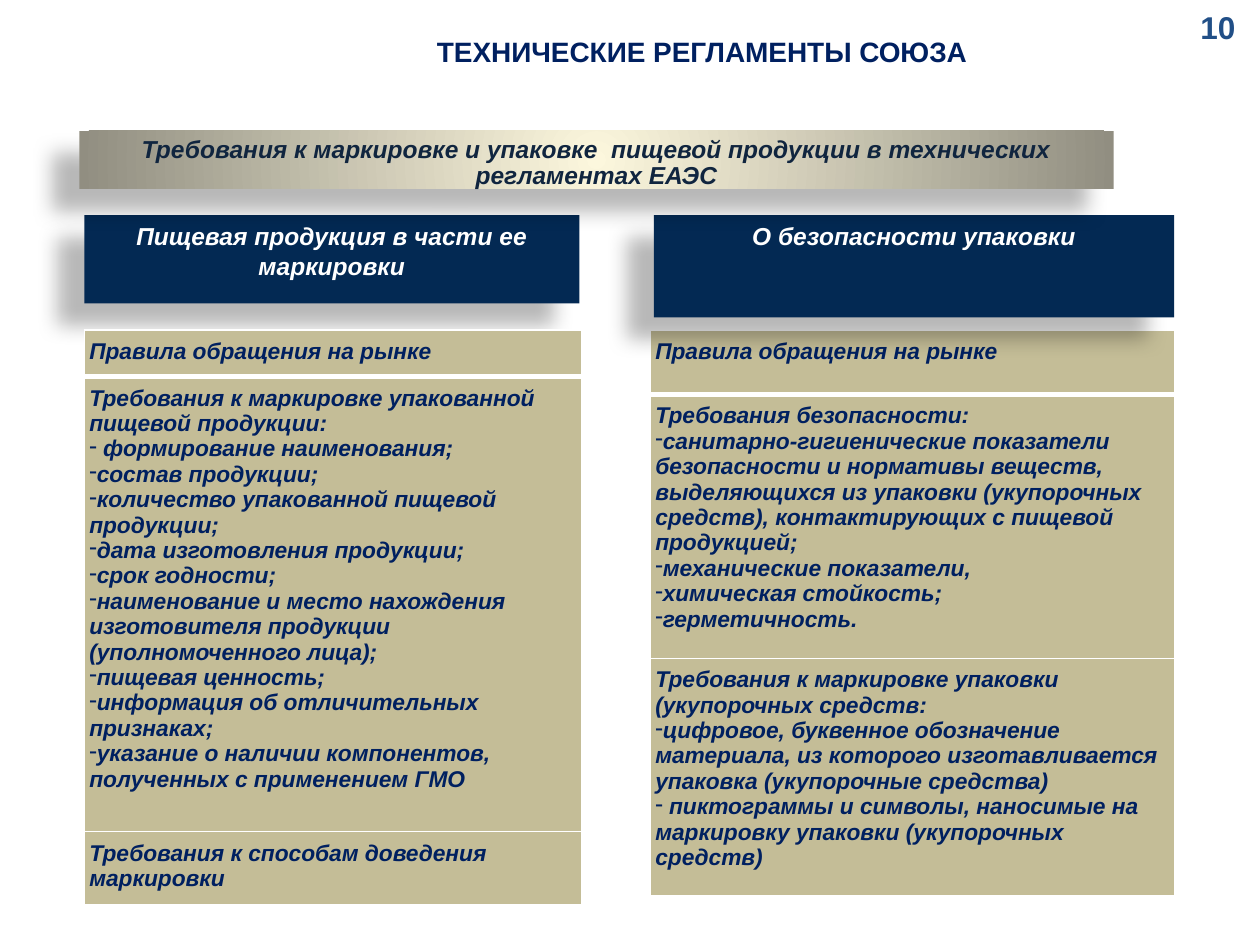
import pptx
import pptx.dml.color
import pptx.enum.shapes
import pptx.enum.text
import pptx.oxml
import pptx.oxml.ns
import pptx.util
from pptx.util import Cm

COLORS = {
    "navy": "002060",
    "number": "214F87",
    "heading": "032953",
    "cell": "C4BD97",
    "white": "FFFFFF",
    "black": "000000",
    "banner_text": "10253F",
    "banner_center": "FCF7DD",
    "banner_edge": "918E81",
}
FONT = "Arial"
CENTER = pptx.enum.text.PP_ALIGN.CENTER
MIDDLE = pptx.enum.text.MSO_ANCHOR.MIDDLE
TOP = pptx.enum.text.MSO_ANCHOR.TOP

# Each cell is a list of paragraphs; a leading "-" makes a dash bullet
MARKING_ROWS = [
    (0.94, ["Правила обращения на рынке"]),
    (9.17, [
        "Требования к маркировке упакованной пищевой продукции:",
        "- формирование наименования;",
        "-состав продукции;",
        "-количество упакованной пищевой продукции;",
        "-дата изготовления продукции;",
        "-срок годности;",
        "-наименование и место нахождения изготовителя продукции (уполномоченного лица);",
        "-пищевая ценность;",
        "-информация об отличительных признаках;",
        "-указание о наличии компонентов, полученных с применением ГМО",
    ]),
    (1.45, ["Требования к способам доведения маркировки"]),
]
PACKAGING_ROWS = [
    (1.3, ["Правила обращения на рынке"]),
    (5.3, [
        "Требования безопасности:",
        "-санитарно-гигиенические показатели безопасности и нормативы веществ, "
        "выделяющихся из упаковки (укупорочных средств), контактирующих с пищевой продукцией;",
        "-механические показатели,",
        "-химическая стойкость;",
        "-герметичность.",
    ]),
    (4.78, [
        "Требования к маркировке упаковки (укупорочных средств:",
        "-цифровое, буквенное обозначение материала, из которого изготавливается "
        "упаковка (укупорочные средства)",
        "- пиктограммы и символы, наносимые на маркировку упаковки (укупорочных средств)",
    ]),
]


def rgb(name):
    return pptx.dml.color.RGBColor.from_string(COLORS[name])


def add_xml(parent, xml):
    namespace = pptx.oxml.ns.nsdecls("a")
    parent.append(pptx.oxml.parse_xml(xml.replace(" ", f" {namespace} ", 1)))


def format_runs(para, size, color, italic=False):
    for span in para.runs:
        span.font.name = FONT
        span.font.size = pptx.util.Pt(size)
        span.font.bold = True
        span.font.italic = italic
        span.font.color.rgb = rgb(color)


def write_line(box, text, size, color, italic=False, anchor=TOP):
    frame = box.text_frame
    frame.word_wrap = True
    frame.vertical_anchor = anchor
    frame.text = text
    para = frame.paragraphs[0]
    para.alignment = CENTER
    format_runs(para, size, color, italic)
    return para


def add_title(page, text):
    title = page.shapes.title
    title.left, title.top, title.width, title.height = Cm(3.4), Cm(0.25), Cm(21.51), Cm(1.55)
    write_line(title, text, 16, "navy", anchor=MIDDLE)


def add_page_number(page, text):
    box = page.shapes.add_textbox(Cm(23.7), Cm(0.03), Cm(1.7), Cm(1.07))
    write_line(box, text, 18, "number")


def add_panel(page, left, top, width, height):
    """Rectangle with a soft shadow falling to the lower left."""
    panel = page.shapes.add_shape(
        pptx.enum.shapes.MSO_SHAPE.RECTANGLE, Cm(left), Cm(top), Cm(width), Cm(height))
    panel.line.fill.background()
    panel.shadow.inherit = False
    effects = panel.element.spPr.find(pptx.oxml.ns.qn("a:effectLst"))
    blur, distance = pptx.util.Pt(11.8), pptx.util.Pt(19.7)
    add_xml(effects, f'<a:outerShdw blurRad="{blur}" dist="{distance}" dir="{141 * 60000}" '
                     f'algn="ctr" rotWithShape="0"><a:srgbClr val="{COLORS["black"]}">'
                     '<a:alpha val="28000"/></a:srgbClr></a:outerShdw>')
    return panel


def add_heading(page, text, left, width, height):
    panel = add_panel(page, left, 4.34, width, height)
    panel.fill.solid()
    panel.fill.fore_color.rgb = rgb("heading")
    write_line(panel, text, 14, "white", italic=True)


def add_banner(page, text):
    panel = add_panel(page, 1.6, 2.64, 20.85, 1.17)
    panel.fill.gradient()
    for stop, position, color in zip(
            panel.fill.gradient_stops, (0, 1), ("banner_center", "banner_edge")):
        stop.position = position
        stop.color.rgb = rgb(color)
    # Radial gradient from the middle
    gradient = panel.element.spPr.find(pptx.oxml.ns.qn("a:gradFill"))
    gradient.remove(gradient.find(pptx.oxml.ns.qn("a:lin")))
    add_xml(gradient, '<a:path path="circle">'
                      '<a:fillToRect l="50000" t="50000" r="50000" b="50000"/></a:path>')
    para = write_line(panel, text, 14, "banner_text", italic=True)
    para.line_spacing = 0.9


def set_borders(cell, top, bottom):
    properties = cell._tc.get_or_add_tcPr()
    for side, points in (("L", 1), ("R", 1), ("T", top), ("B", bottom)):
        add_xml(properties, f'<a:ln{side} w="{pptx.util.Pt(points)}"><a:solidFill>'
                            f'<a:srgbClr val="{COLORS["white"]}"/></a:solidFill></a:ln{side}>')


def fill_cell(cell, lines):
    cell.margin_left = cell.margin_right = Cm(0.1)
    cell.margin_top = cell.margin_bottom = Cm(0.18)
    cell.fill.solid()
    cell.fill.fore_color.rgb = rgb("cell")
    cell.text_frame.text = "\n".join(line.removeprefix("-") for line in lines)
    for para, line in zip(cell.text_frame.paragraphs, lines):
        if line.startswith("-"):
            properties = para._p.get_or_add_pPr()
            properties.set("marL", "0")
            properties.set("indent", "0")
            add_xml(properties, '<a:buFontTx />')
            add_xml(properties, '<a:buChar char="-"/>')
        format_runs(para, 13, "navy", italic=True)


def add_requirements(page, rows, left, width):
    total = sum(height for height, lines in rows)
    table = page.shapes.add_table(
        len(rows), 1, Cm(left), Cm(6.65), Cm(width), Cm(total)).table
    table.first_row = False
    table.horz_banding = False
    for index, (height, lines) in enumerate(rows):
        table.rows[index].height = Cm(height)
        cell = table.cell(index, 0)
        # A thick rule separates the first row from the rest
        set_borders(cell, top=3 if index == 1 else 1, bottom=3 if index == 0 else 1)
        fill_cell(cell, lines)


def main():
    deck = pptx.Presentation()
    deck.slide_width, deck.slide_height = Cm(25.4), Cm(19.05)
    page = deck.slides.add_slide(deck.slide_layouts[5])

    # Top of the page
    add_page_number(page, "10")
    add_title(page, "ТЕХНИЧЕСКИЕ РЕГЛАМЕНТЫ СОЮЗА")

    # Columns: the right heading casts its shadow over its table
    add_heading(page, "Пищевая продукция в части ее маркировки", 1.7, 9.98, 1.78)
    add_requirements(page, PACKAGING_ROWS, 13.11, 10.57)
    add_heading(page, "О безопасности упаковки", 13.18, 10.49, 2.06)
    add_requirements(page, MARKING_ROWS, 1.7, 10.03)

    # Banner above both columns
    add_banner(page, "Требования к маркировке и упаковке  пищевой продукции "
                     "в технических регламентах ЕАЭС")

    deck.save("out.pptx")


if __name__ == "__main__":
    main()
